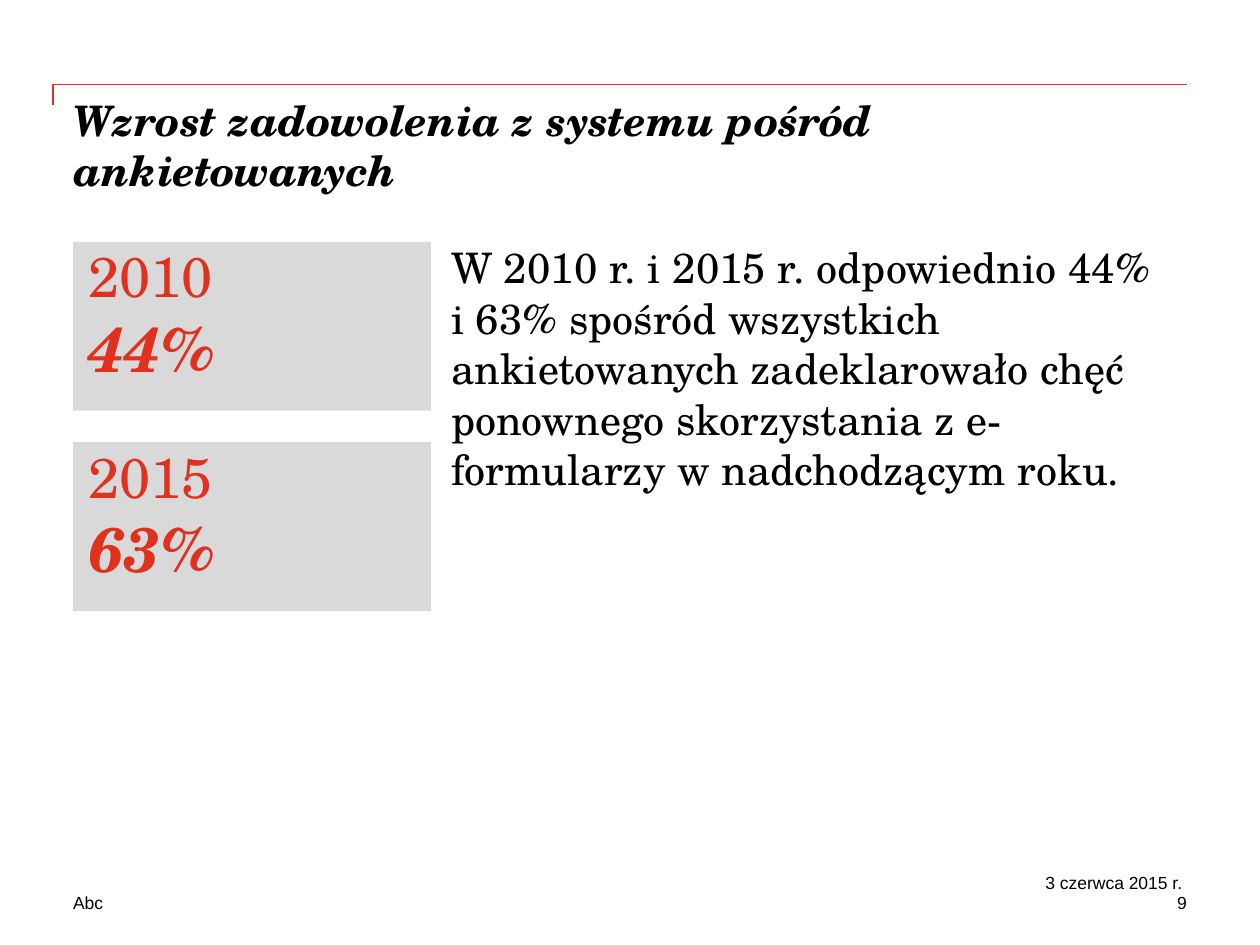
from pptx import Presentation
from pptx.dml.color import RGBColor
from pptx.enum.shapes import MSO_SHAPE as Shape
from pptx.enum.text import MSO_ANCHOR as Anchor, MSO_AUTO_SIZE as AutoSize, PP_ALIGN as Align
from pptx.oxml.ns import qn
from pptx.util import Inches, Pt
from lxml import etree

THEME = {
    "red": RGBColor.from_string("E0301E"),
    "black": RGBColor.from_string("000000"),
    "grey": RGBColor.from_string("D9D9D9"),
    "serif": "TeX Gyre Schola",
    "sans": "Arial",
    "text": Pt(24),
    "year": Pt(32),
    "share": Pt(36),
    "footer": Pt(10),
}


def place(box, left, top, width, height):
    bounds = {"left": left, "top": top, "width": width, "height": height}
    for side, inches in bounds.items():
        setattr(box, side, Inches(inches))


def write(box, lines, font, color, align=Align.LEFT, inset=0, after=0):
    frame = box.text_frame
    frame_format = {
        "word_wrap": True, "auto_size": AutoSize.NONE, "vertical_anchor": Anchor.TOP,
        "margin_left": Inches(inset), "margin_right": 0, "margin_top": 0, "margin_bottom": 0,
    }
    for key, value in frame_format.items():
        setattr(frame, key, value)
    for index, (text, size, strong) in enumerate(lines):
        paragraph = frame.add_paragraph() if index else frame.paragraphs[0]
        paragraph.text = text
        spacing = {"alignment": align, "space_before": Pt(0), "space_after": Pt(after)}
        for key, value in spacing.items():
            setattr(paragraph, key, value)
        for run in paragraph.runs:
            style = {"name": font, "size": size, "bold": strong, "italic": strong}
            for key, value in style.items():
                setattr(run.font, key, value)
            run.font.color.rgb = color


deck = Presentation()
deck.slide_width, deck.slide_height = Inches(10), Inches(7.5)
slide = deck.slides.add_slide(deck.slide_layouts[1])
shapes = slide.shapes

outline = shapes.build_freeform(Inches(0.42), Inches(0.83))
outline.add_line_segments(
    [(Inches(0.42), Inches(0.67)), (Inches(9.42), Inches(0.67))], close=False)
header_rule = outline.convert_to_shape()
header_rule.shadow.inherit = False
header_rule.fill.background()
header_rule.line.color.rgb = THEME["red"]
header_rule.line.width = Pt(1)

headline = shapes.title
place(headline, 0.58, 0.75, 8.83, 1)
write(headline, [("Wzrost zadowolenia z systemu pośród ankietowanych", THEME["text"], True)],
      THEME["serif"], THEME["black"])

finding = slide.placeholders[1]
place(finding, 3.58, 1.92, 5.83, 4.83)
write(finding, [("W 2010 r. i 2015 r. odpowiednio 44% \ni 63% spośród wszystkich ankietowanych "
                 "zadeklarowało chęć ponownego skorzystania z e-formularzy w nadchodzącym roku.",
                 THEME["text"], False)],
      THEME["serif"], THEME["black"], after=9)
finding_format = finding.text_frame.paragraphs[0]._p.get_or_add_pPr()
for key in ("marL", "indent"):
    finding_format.set(key, "0")
etree.SubElement(finding_format, qn("a:buNone"))

for row, (year, share) in enumerate([("2010", "44%"), ("2015", "63%")]):
    card = shapes.add_shape(Shape.RECTANGLE, Inches(0.58), Inches(1.92 + row * 1.59),
                            Inches(2.84), Inches(1.34))
    card.shadow.inherit = False
    card.fill.solid()
    card.fill.fore_color.rgb = THEME["grey"]
    card.line.fill.background()
    write(card, [(year, THEME["year"], False), (share, THEME["share"], True)],
          THEME["serif"], THEME["red"], inset=0.12)

footers = [
    ("Abc", 0.58, 7.08, 2.83, Align.LEFT),
    ("9", 7.75, 7.08, 1.67, Align.RIGHT),
    ("3 czerwca 2015 r. ", 7.75, 6.92, 1.67, Align.RIGHT),
]
for text, left, top, width, align in footers:
    footer = shapes.add_textbox(Inches(left), Inches(top), Inches(width), Inches(0.17))
    write(footer, [(text, THEME["footer"], False)], THEME["sans"], THEME["black"], align)

deck.save("out.pptx")
